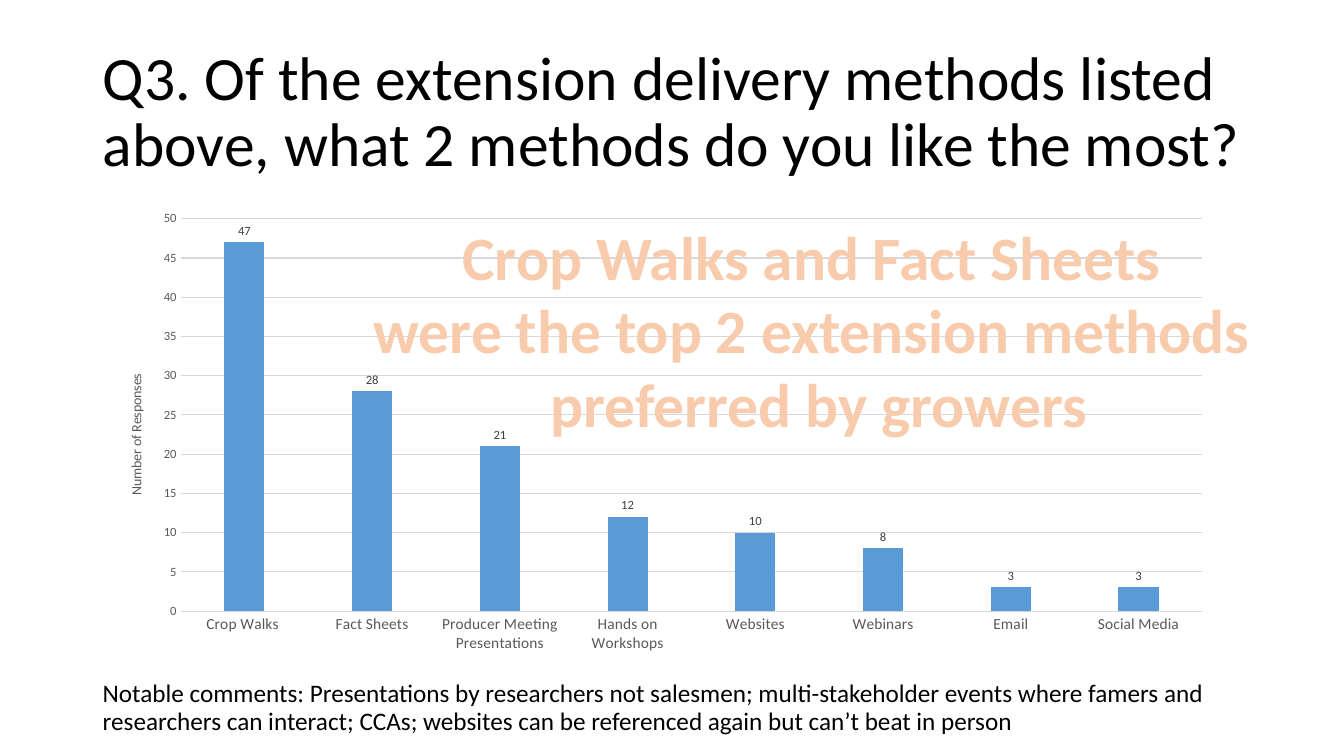
from dataclasses import dataclass

from lxml.etree import SubElement
from pptx import Presentation
from pptx.chart.data import CategoryChartData
from pptx.dml.color import RGBColor
from pptx.enum.chart import XL_CHART_TYPE, XL_LABEL_POSITION, XL_TICK_MARK
from pptx.enum.text import MSO_ANCHOR, MSO_AUTO_SIZE, PP_ALIGN
from pptx.oxml import parse_xml
from pptx.oxml.ns import nsdecls, qn
from pptx.util import Cm, Pt

BLACK = RGBColor(0x00, 0x00, 0x00)
GRAY = RGBColor(0x59, 0x59, 0x59)
LABEL_GRAY = RGBColor(0x40, 0x40, 0x40)
GRID = RGBColor(0xD9, 0xD9, 0xD9)
BLUE = RGBColor(0x5B, 0x9B, 0xD5)
PEACH = RGBColor(0xF8, 0xCB, 0xAD)
ORANGE = RGBColor(0xED, 0x7D, 0x31)
FONT = "Calibri"


@dataclass(frozen=True)
class Box:
    left: float
    top: float
    width: float
    height: float

    def lengths(self) -> tuple:
        return Cm(self.left), Cm(self.top), Cm(self.width), Cm(self.height)


@dataclass(frozen=True)
class TextBlock:
    box: Box
    lines: tuple[str, ...]
    size: int
    color: RGBColor = BLACK
    bold: bool = False
    align: PP_ALIGN = PP_ALIGN.LEFT
    anchor: MSO_ANCHOR = MSO_ANCHOR.TOP
    spacing: float = 0.9
    wrap: bool = True
    outline: RGBColor | None = None


TITLE = TextBlock(
    Box(2.34, 1.02, 29.21, 3.68),
    ("Q3. Of the extension delivery methods listed above, what 2 methods do you like the most?",),
    44, anchor=MSO_ANCHOR.MIDDLE)
COMMENTS = TextBlock(
    Box(2.34, 17.04, 29.21, 2.01),
    ("Notable comments: Presentations by researchers not salesmen; multi-stakeholder events "
     "where famers and researchers can interact; CCAs; websites can be referenced again "
     "but can’t beat in person",),
    18)
CALLOUT = TextBlock(
    Box(9.3, 5.38, 22.68, 5.89),
    ("Crop Walks and Fact Sheets ", "were the top 2 extension methods ", "preferred by growers"),
    44, PEACH, True, PP_ALIGN.CENTER, spacing=1.0, wrap=False, outline=ORANGE)
CHART_BOX = Box(2.57, 5.05, 28.3, 11.63)
RESPONSES = {
    "Crop Walks ": 47,
    "Fact Sheets": 28,
    "Producer Meeting Presentations": 21,
    "Hands on Workshops": 12,
    "Websites": 10,
    "Webinars": 8,
    "Email": 3,
    "Social Media": 3,
}


def style_font(font, size: float, color: RGBColor, bold: bool = False) -> None:
    font.name = FONT
    font.size = Pt(size)
    font.bold = bold
    font.color.rgb = color


def fill_text(sp, block: TextBlock) -> None:
    sp.left, sp.top, sp.width, sp.height = block.box.lengths()
    tf = sp.text_frame
    tf.word_wrap = block.wrap
    tf.auto_size = MSO_AUTO_SIZE.NONE
    tf.vertical_anchor = block.anchor
    for i, line in enumerate(block.lines):
        p = tf.add_paragraph() if i else tf.paragraphs[0]
        p.alignment = block.align
        p.line_spacing = block.spacing
        r = p.add_run()
        r.text = line
        style_font(r.font, block.size, block.color, block.bold)
        if block.outline is not None:
            r.font._element.insert(0, parse_xml(
                f'<a:ln {nsdecls("a")} w="{Pt(1.75)}"><a:solidFill>'
                f'<a:srgbClr val="{block.outline}"/></a:solidFill></a:ln>'))


def add_text(s, block: TextBlock) -> None:
    fill_text(s.shapes.add_textbox(*block.box.lengths()), block)


def place(element, inner: bool, **fractions: float) -> None:
    layout = element.find(qn("c:layout"))
    if layout is None:
        layout = parse_xml(f'<c:layout {nsdecls("c")}/>')
        element.insert(1 if element.find(qn("c:tx")) is not None else 0, layout)
    manual = SubElement(layout, qn("c:manualLayout"))
    if inner:
        SubElement(manual, qn("c:layoutTarget")).set("val", "inner")
    for axis in ("x", "y"):
        SubElement(manual, qn(f"c:{axis}Mode")).set("val", "edge")
    for key, value in fractions.items():
        SubElement(manual, qn(f"c:{key}")).set("val", str(value))


def style_axis(axis, size: float) -> None:
    axis.major_tick_mark = axis.minor_tick_mark = XL_TICK_MARK.NONE
    style_font(axis.tick_labels.font, size, GRAY)


def add_response_chart(s) -> None:
    data = CategoryChartData()
    data.categories = list(RESPONSES)
    data.add_series("Series 1", list(RESPONSES.values()))
    chart = s.shapes.add_chart(
        XL_CHART_TYPE.COLUMN_CLUSTERED, *CHART_BOX.lengths(), data).chart
    style_font(chart.font, 10, BLACK)
    chart.has_title = False
    chart.has_legend = False

    style_axis(chart.category_axis, 11)
    chart.category_axis.format.line.color.rgb = GRID
    chart.category_axis.format.line.width = Pt(0.75)

    values = chart.value_axis
    style_axis(values, 9)
    values.minimum_scale, values.maximum_scale, values.major_unit = 0, 50, 5
    values.format.line.fill.background()
    values.major_gridlines.format.line.color.rgb = GRID
    values.major_gridlines.format.line.width = Pt(0.75)
    r = values.axis_title.text_frame.paragraphs[0].add_run()
    r.text = "Number of Responses"
    style_font(r.font, 10, GRAY)
    values.axis_title.text_frame._txBody.bodyPr.set("rot", "-5400000")
    values.axis_title.text_frame._txBody.bodyPr.set("vert", "horz")
    place(values.axis_title._element, False, x=0.02, y=0.37)

    plot = chart.plots[0]
    plot.gap_width = 219
    plot.overlap = -27
    plot.vary_by_categories = False
    plot.series[0].format.fill.solid()
    plot.series[0].format.fill.fore_color.rgb = BLUE
    labels = plot.series[0].data_labels
    labels.show_value = True
    labels.position = XL_LABEL_POSITION.OUTSIDE_END
    style_font(labels.font, 9, LABEL_GRAY)
    place(chart._chartSpace.chart.plotArea, True, x=0.07, y=0.04, w=0.91, h=0.85)


def main() -> None:
    prs = Presentation()
    prs.slide_width, prs.slide_height = Cm(33.87), Cm(19.05)
    s = prs.slides.add_slide(prs.slide_layouts[5])
    fill_text(s.shapes.title, TITLE)
    add_text(s, COMMENTS)
    add_response_chart(s)
    add_text(s, CALLOUT)
    prs.save("out.pptx")


if __name__ == "__main__":
    main()
